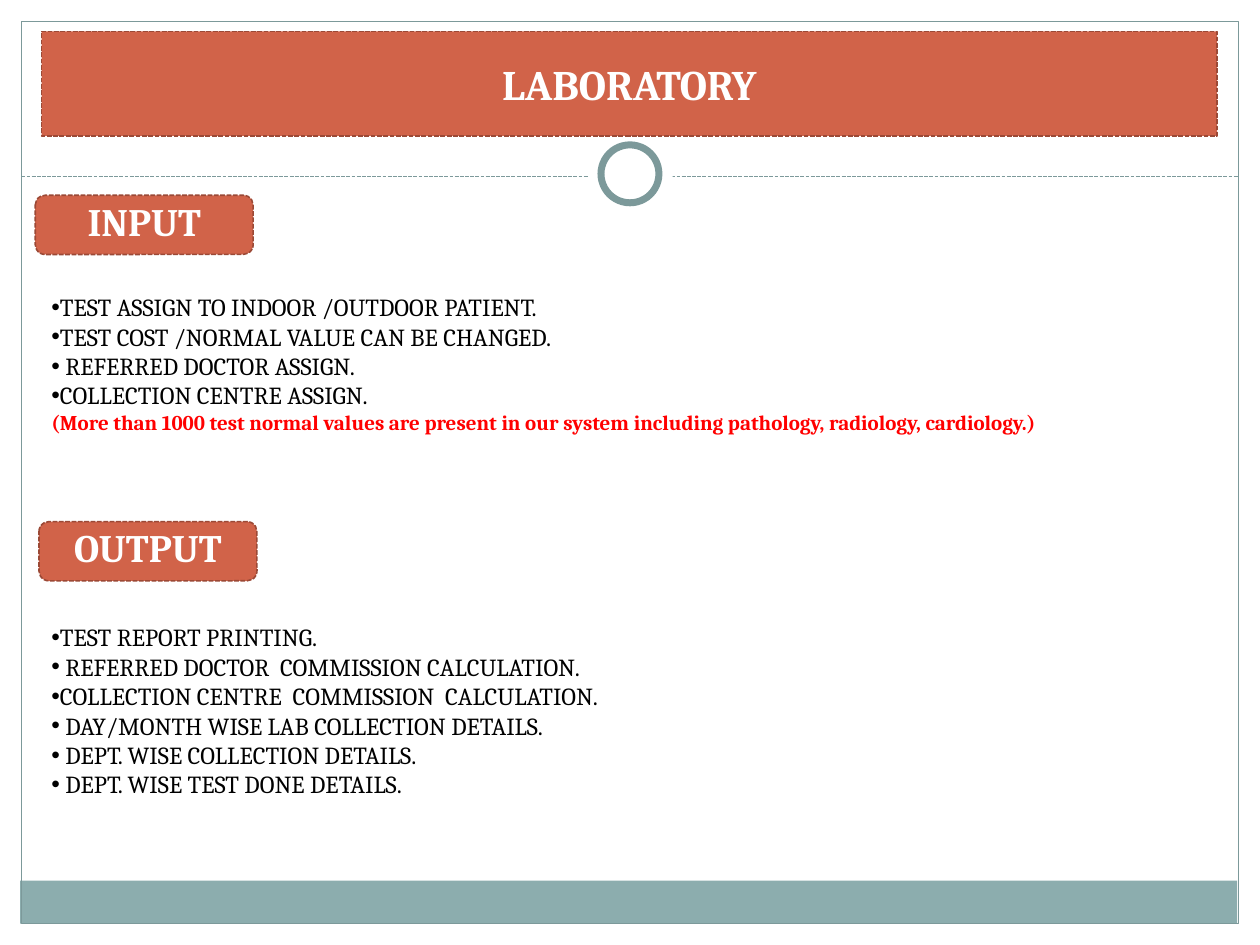
from dataclasses import dataclass
from typing import Optional

from lxml import etree
from pptx import Presentation
from pptx import util as u
from pptx.dml.color import RGBColor
from pptx.enum import dml, shapes, text
from pptx.oxml.ns import qn


@dataclass(frozen=True)
class Theme:
    font: str = "Cambria"
    white: str = "FFFFFF"
    black: str = "000000"
    red: str = "FF0000"
    accent: str = "D16349"
    accent_edge: str = "9B4936"
    band: str = "8CADAE"
    frame: str = "7C999A"
    title_size: float = 24
    label_size: float = 22.2
    body_size: float = 14
    note_size: float = 12
    thin: float = 0.75
    edge: float = 0.9
    ring: float = 4


@dataclass(frozen=True)
class Area:
    left: float
    top: float
    width: float
    height: float

    def lengths(self) -> tuple:
        return tuple(u.Inches(v) for v in (self.left, self.top, self.width, self.height))


@dataclass(frozen=True)
class Section:
    label: str
    label_area: Area
    body_area: Area
    items: tuple
    note: str = ""


THEME = Theme()
KIND = shapes.MSO_SHAPE

SECTIONS = (
    Section(
        "INPUT", Area(0.28, 1.55, 1.73, 0.47), Area(0.31, 2.27, 9.38, 1.48),
        (
            "TEST ASSIGN TO INDOOR /OUTDOOR PATIENT.",
            "TEST COST /NORMAL VALUE CAN BE CHANGED.",
            " REFERRED DOCTOR ASSIGN.",
            "COLLECTION CENTRE ASSIGN.",
        ),
        "(More than 1000 test normal values are present in our system "
        "including pathology, radiology, cardiology.)",
    ),
    Section(
        "OUTPUT", Area(0.31, 4.14, 1.73, 0.47), Area(0.31, 4.89, 9.38, 1.75),
        (
            "TEST REPORT PRINTING.",
            " REFERRED DOCTOR  COMMISSION CALCULATION.",
            "COLLECTION CENTRE  COMMISSION  CALCULATION.",
            " DAY/MONTH WISE LAB COLLECTION DETAILS.",
            " DEPT. WISE COLLECTION DETAILS.",
            " DEPT. WISE TEST DONE DETAILS.",
        ),
    ),
)


def style_line(line, color: str, width: float, dashed: bool = False) -> None:
    line.color.rgb = RGBColor.from_string(color)
    line.width = u.Pt(width)
    if dashed:
        line.dash_style = dml.MSO_LINE.SQUARE_DOT


def add_box(page, kind, area: Area, fill: Optional[str] = None,
            edge: Optional[str] = None, width: float = THEME.thin, dashed: bool = False):
    box = page.shapes.add_shape(kind, *area.lengths())
    box.shadow.inherit = False
    if fill:
        box.fill.solid()
        box.fill.fore_color.rgb = RGBColor.from_string(fill)
    else:
        box.fill.background()
    if edge:
        style_line(box.line, edge, width, dashed)
    else:
        box.line.fill.background()
    return box


def add_span(para, words: str, size: float, color: str, bold: bool = False) -> None:
    span = para.add_run()
    span.text = words
    span.font.name = THEME.font
    span.font.size = u.Pt(size)
    span.font.bold = bold
    span.font.color.rgb = RGBColor.from_string(color)


def add_heading(page, kind, area: Area, words: str, size: float, spacing: float = 1.0) -> None:
    box = add_box(page, kind, area, THEME.accent, THEME.accent_edge, THEME.edge, dashed=True)
    box.text_frame.word_wrap = True
    box.text_frame.vertical_anchor = text.MSO_ANCHOR.MIDDLE
    para = box.text_frame.paragraphs[0]
    para.alignment = text.PP_ALIGN.CENTER
    para.line_spacing = spacing
    add_span(para, words, size, THEME.white, bold=True)


def add_bullet(para) -> None:
    props = para._p.get_or_add_pPr()
    props.set("marL", "0")
    props.set("indent", "0")
    etree.SubElement(props, qn("a:buFont")).set("typeface", "Arial")
    etree.SubElement(props, qn("a:buChar")).set("char", "•")


def add_section(page, section: Section) -> None:
    add_heading(page, KIND.ROUNDED_RECTANGLE, section.label_area, section.label,
                THEME.label_size, spacing=0.8)
    frame = page.shapes.add_textbox(*section.body_area.lengths()).text_frame
    frame.word_wrap = True
    frame.auto_size = text.MSO_AUTO_SIZE.SHAPE_TO_FIT_TEXT
    for index, item in enumerate(section.items):
        para = frame.add_paragraph() if index else frame.paragraphs[0]
        add_bullet(para)
        add_span(para, item, THEME.body_size, THEME.black)
    if section.note:
        add_span(frame.add_paragraph(), section.note, THEME.note_size, THEME.red, bold=True)


def add_frame(page) -> None:
    # Footer band and page border
    add_box(page, KIND.RECTANGLE, Area(0.16, 6.99, 9.66, 0.34), THEME.band)
    add_box(page, KIND.RECTANGLE, Area(0.17, 0.17, 9.66, 7.16), edge=THEME.frame)

    # Dashed divider, interrupted by a ring
    divider = page.shapes.add_connector(
        shapes.MSO_CONNECTOR.STRAIGHT,
        u.Inches(0.17), u.Inches(1.4), u.Inches(9.83), u.Inches(1.4))
    style_line(divider.line, THEME.frame, THEME.thin, dashed=True)
    etree.SubElement(divider._element.spPr, qn("a:effectLst"))
    add_box(page, KIND.OVAL, Area(4.67, 1.05, 0.67, 0.67), THEME.white)
    add_box(page, KIND.OVAL, Area(4.77, 1.15, 0.46, 0.46), THEME.white, THEME.frame, THEME.ring)


def main() -> None:
    deck = Presentation()
    deck.slide_width, deck.slide_height = u.Inches(10), u.Inches(7.5)
    page = deck.slides.add_slide(deck.slide_layouts[6])

    add_frame(page)
    add_heading(page, KIND.RECTANGLE, Area(0.33, 0.25, 9.33, 0.83), "LABORATORY",
                THEME.title_size)
    for section in SECTIONS:
        add_section(page, section)

    deck.save("out.pptx")


if __name__ == "__main__":
    main()
